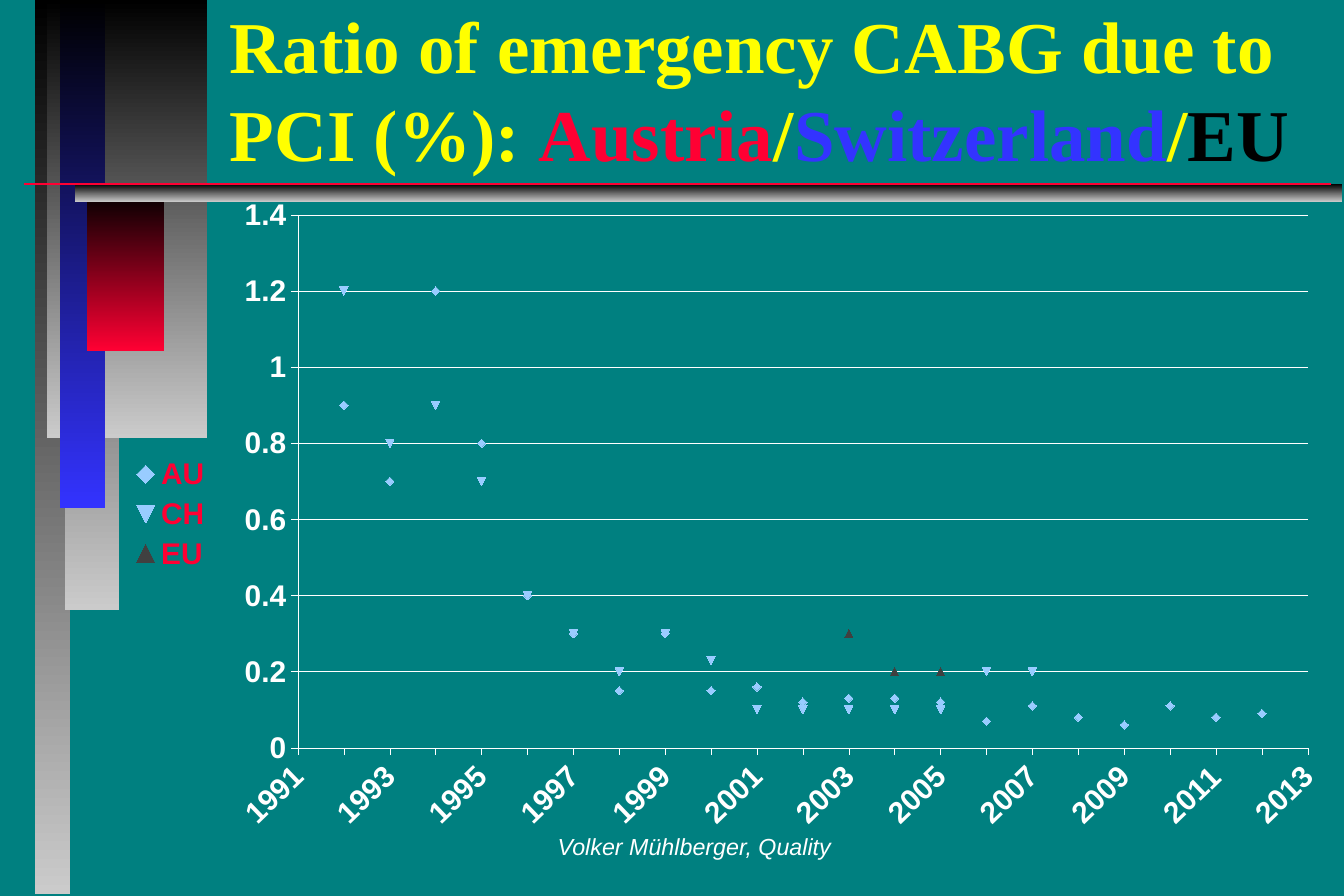
import pptx
import pptx.util
import pptx.chart.data
from pptx.dml.color import RGBColor
from pptx.enum.chart import XL_CHART_TYPE, XL_LEGEND_POSITION, XL_MARKER_STYLE, XL_TICK_MARK
from pptx.enum.shapes import MSO_CONNECTOR, MSO_SHAPE
from pptx.enum.text import MSO_ANCHOR, MSO_AUTO_SIZE, PP_ALIGN
from pptx.oxml import parse_xml
from pptx.oxml.ns import nsdecls

WIDTH, HEIGHT = 1344, 896
SCALE = pptx.util.Inches(11.25) / WIDTH

TEAL = RGBColor(0x00, 0x80, 0x80)
BLACK = RGBColor(0x00, 0x00, 0x00)
WHITE = RGBColor(0xFF, 0xFF, 0xFF)
SILVER = RGBColor(0xCB, 0xCB, 0xCB)
BLUE = RGBColor(0x33, 0x33, 0xFF)
RED = RGBColor(0xFF, 0x00, 0x33)
YELLOW = RGBColor(0xFF, 0xFF, 0x00)
SKY = RGBColor(0x99, 0xCC, 0xFF)
CHARCOAL = RGBColor(0x40, 0x40, 0x40)

# Emergency CABG ratio in percent, one value a year from 1992
FIRST_YEAR = 1992
RATIOS = [
    ("AU", SKY, XL_MARKER_STYLE.DIAMOND,
     [0.9, 0.7, 1.2, 0.8, 0.4, 0.3, 0.15, 0.3, 0.15, 0.16, 0.12, 0.13, 0.13, 0.12,
      0.07, 0.11, 0.08, 0.06, 0.11, 0.08, 0.09]),
    ("CH", SKY, XL_MARKER_STYLE.AUTOMATIC,
     [1.2, 0.8, 0.9, 0.7, 0.4, 0.3, 0.2, 0.3, 0.23, 0.1, 0.1, 0.1, 0.1, 0.1, 0.2, 0.2]),
    ("EU", CHARCOAL, XL_MARKER_STYLE.TRIANGLE, [None] * 11 + [0.3, 0.2, 0.2]),
]


def px(length):
    return pptx.util.Emu(round(length * SCALE))


def place(box):
    return [px(length) for length in box]


def add_decoration(slide, box):
    """Fading bars down the left side and the rule under the title."""
    left, top, width, _ = box
    bars = [
        (35, 0, 35, 894, SILVER),
        (65, 0, 54, 610, SILVER),
        (47, 0, 160, 438, SILVER),
        (60, 0, 45, 508, BLUE),
        (87, 191, 77, 160, RED),
        (75, 184, width - 77, 18, SILVER),
    ]
    for x, y, bar_width, bar_height, end_color in bars:
        bar = slide.shapes.add_shape(
            MSO_SHAPE.RECTANGLE, *place((left + x, top + y, bar_width, bar_height)))
        bar.shadow.inherit = False
        bar.line.fill.background()
        bar.fill.gradient()
        bar.fill.gradient_angle = 270
        for stop, color in zip(bar.fill.gradient_stops, (BLACK, end_color)):
            stop.color.rgb = color

    rule = slide.shapes.add_connector(
        MSO_CONNECTOR.STRAIGHT,
        *place((left + 24, top + 184, left + width - 13, top + 184)))
    rule.line.color.rgb = RED
    rule.line.width = pptx.util.Pt(1)
    rule._element.spPr.append(parse_xml(f"<a:effectLst {nsdecls('a')}/>"))


def add_title(slide, box):
    title = slide.shapes.title
    title.left, title.top, title.width, title.height = place(box)
    frame = title.text_frame
    frame.word_wrap = True
    frame.auto_size = MSO_AUTO_SIZE.NONE
    frame.vertical_anchor = MSO_ANCHOR.BOTTOM
    heading = frame.paragraphs[0]
    heading.alignment = PP_ALIGN.LEFT
    heading.line_spacing = 1.0
    heading.font.name = "Times New Roman"
    heading.font.size = pptx.util.Pt(44)
    heading.font.bold = True
    for words, color in [
        ("Ratio of emergency CABG due to PCI (%): ", YELLOW),
        ("Austria", RED), ("/", YELLOW),
        ("Switzerland", BLUE), ("/", YELLOW), ("EU", BLACK),
    ]:
        run = heading.add_run()
        run.text = words
        run.font.color.rgb = color


def add_author(slide, box):
    frame = slide.shapes.add_textbox(*place(box)).text_frame
    frame.word_wrap = True
    frame.vertical_anchor = MSO_ANCHOR.MIDDLE
    author = frame.paragraphs[0]
    author.text = "Volker Mühlberger, Quality"
    author.alignment = PP_ALIGN.CENTER
    author.font.name = "Arial"
    author.font.size = pptx.util.Pt(14)
    author.font.italic = True
    author.font.color.rgb = WHITE


def manual_layout(box, area, inner=False):
    """Layout of an area, given in slide px, as fractions of the chart box."""
    left, top, width, height = box
    x, y, area_width, area_height = area
    target = '<c:layoutTarget val="inner"/>' if inner else ""
    return parse_xml(
        f"<c:layout {nsdecls('c')}><c:manualLayout>{target}"
        '<c:xMode val="edge"/><c:yMode val="edge"/>'
        f'<c:x val="{(x - left) / width:.4f}"/><c:y val="{(y - top) / height:.4f}"/>'
        f'<c:w val="{area_width / width:.4f}"/><c:h val="{area_height / height:.4f}"/>'
        "</c:manualLayout></c:layout>")


def format_axis(axis, low, high, step):
    axis.minimum_scale, axis.maximum_scale, axis.major_unit = low, high, step
    axis.major_tick_mark = XL_TICK_MARK.OUTSIDE
    axis.minor_tick_mark = XL_TICK_MARK.NONE
    axis.format.line.color.rgb = WHITE
    axis.format.line.width = pptx.util.Pt(0.25)
    axis.tick_labels.font.bold = True
    axis.tick_labels.number_format = "General"
    axis.tick_labels.number_format_is_linked = False


def add_ratio_chart(slide, box):
    ratios = pptx.chart.data.XyChartData()
    for country, _, _, values in RATIOS:
        points = ratios.add_series(country)
        for year, value in enumerate(values, FIRST_YEAR):
            if value is not None:
                points.add_data_point(year, value)
    chart = slide.shapes.add_chart(XL_CHART_TYPE.XY_SCATTER, *place(box), ratios).chart
    chart.has_title = False
    chart.font.name = "Arial"
    chart.font.size = pptx.util.Pt(18)
    chart.font.color.rgb = WHITE

    # Markers only
    plot = chart.plots[0]
    plot.vary_by_categories = False
    for series, (_, color, style, _) in zip(plot.series, RATIOS):
        series.format.line.fill.background()
        series.marker.style = style
        series.marker.size = 5
        series.marker.format.fill.solid()
        series.marker.format.fill.fore_color.rgb = color
        series.marker.format.line.fill.background()

    # Axes, with slanted years
    years, percent = chart.category_axis, chart.value_axis
    format_axis(years, 1991, 2013, 1)
    format_axis(percent, 0, 1.4, 0.2)
    years.has_major_gridlines = False
    years._element.find("{*}txPr/{*}bodyPr").set("rot", "-2640000")
    percent.has_major_gridlines = True
    percent.major_gridlines.format.line.color.rgb = WHITE
    percent.major_gridlines.format.line.width = pptx.util.Pt(0.25)

    # Legend and plot area
    chart.has_legend = True
    legend = chart.legend
    legend.position = XL_LEGEND_POSITION.LEFT
    legend.include_in_layout = False
    legend.font.bold = True
    legend.font.size = pptx.util.Pt(18)
    legend.font.color.rgb = RED
    legend._element.find("{*}legendPos").addnext(manual_layout(box, (129, 454, 80, 120)))
    plot_area = chart._chartSpace.chart.plotArea
    for layout in plot_area.findall("{*}layout"):
        plot_area.remove(layout)
    plot_area.insert(0, manual_layout(box, (298, 215, 1010, 533), inner=True))


def main():
    presentation = pptx.Presentation()
    presentation.slide_width, presentation.slide_height = px(WIDTH), px(HEIGHT)
    slide = presentation.slides.add_slide(presentation.slide_layouts[5])
    slide.background.fill.solid()
    slide.background.fill.fore_color.rgb = TEAL
    add_decoration(slide, (0, 0, WIDTH, HEIGHT))
    add_author(slide, (482, 816, 425, 60))
    add_title(slide, (218, 30, 1126, 152))
    add_ratio_chart(slide, (117, 185, 1227, 658))
    presentation.save("out.pptx")


if __name__ == "__main__":
    main()
